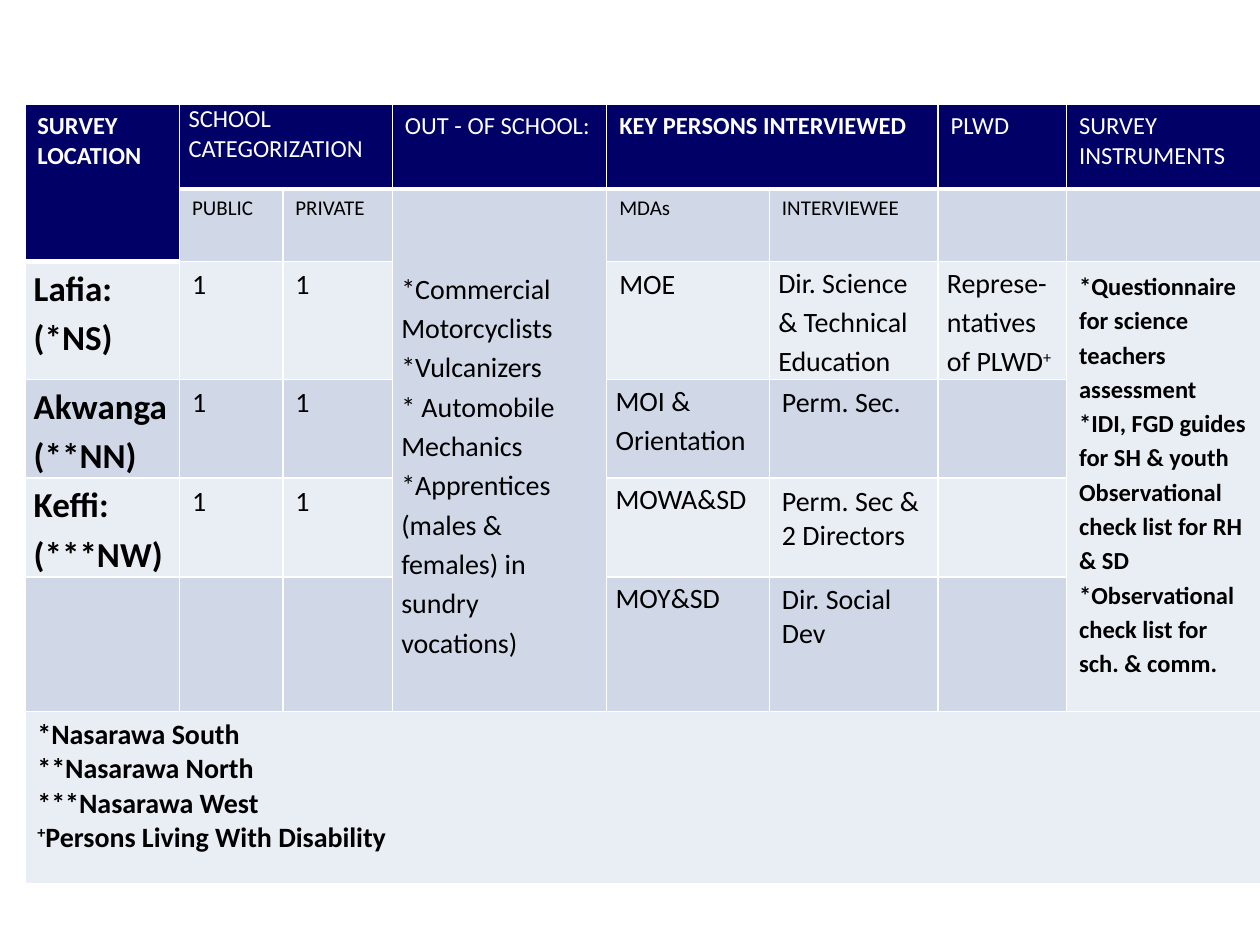
from dataclasses import dataclass

from lxml.etree import SubElement
from pptx import Presentation
from pptx.dml.color import RGBColor
from pptx.oxml.ns import qn
from pptx.util import Cm, Pt


@dataclass(frozen=True)
class Style:
    size: int
    bold: bool = False
    color: str = "000000"
    tight: bool = False
    spacing: float = 1.0
    top: float = 0.0


class Theme:
    font = "Calibri"
    header = "000066"
    bands = ("E9EDF4", "D0D8E8")
    border = "FFFFFF"
    styles = {
        "head": Style(14, color="FFFFFF"),
        "head bold": Style(14, bold=True, color="FFFFFF"),
        "head tight": Style(14, color="FFFFFF", tight=True),
        "subhead": Style(12),
        "place": Style(20, bold=True, tight=True, spacing=1.15),
        "plain": Style(16),
        "tight": Style(16, tight=True, spacing=1.15),
        "groups": Style(16, tight=True, spacing=1.15, top=1.58),
        "tools": Style(14, bold=True, spacing=1.15),
        "notes": Style(16, bold=True),
    }


COLUMN_WIDTHS = [3.12, 2.08, 2.21, 4.32, 3.28, 3.4, 2.59, 3.91]
ROW_HEIGHTS = [1.7, 1.46, 2.37, 1.98, 1.99, 2.72, 3.47]
SPANS = [(0, 0, 1, 0), (0, 1, 0, 2), (0, 4, 0, 5), (1, 3, 5, 3), (2, 7, 5, 7), (6, 0, 6, 7)]
SUPERSCRIPT = "+"

CONTENT = [
    (0, 0, "head bold", [["SURVEY LOCATION"]]),
    (0, 1, "head tight", [["SCHOOL CATEGORIZATION"]]),
    (0, 3, "head", [["OUT - OF SCHOOL:"]]),
    (0, 4, "head bold", [["KEY PERSONS INTERVIEWED"]]),
    (0, 6, "head", [["PLWD"]]),
    (0, 7, "head", [["SURVEY INSTRUMENTS"]]),
    (1, 1, "subhead", [["PUBLIC"]]),
    (1, 2, "subhead", [["PRIVATE"]]),
    (1, 3, "groups", [
        ["*Commercial Motorcyclists"],
        ["*Vulcanizers"],
        ["* Automobile Mechanics"],
        ["*Apprentices (males & females) in sundry vocations)"],
    ]),
    (1, 4, "subhead", [["MDAs"]]),
    (1, 5, "subhead", [["INTERVIEWEE"]]),
    (2, 0, "place", [["Lafia: (*NS)"]]),
    (2, 1, "plain", [["1"]]),
    (2, 2, "plain", [["1"]]),
    (2, 4, "plain", [["MOE"]]),
    (2, 5, "tight", [["Dir. Science & Technical Education"]]),
    (2, 6, "tight", [["Represe-ntatives of PLWD", SUPERSCRIPT]]),
    (2, 7, "tools", [
        ["*Questionnaire for science teachers assessment"],
        ["*IDI, FGD guides for SH & youth"],
        ["Observational check list for RH & SD"],
        ["*Observational check list for sch. & comm."],
    ]),
    (3, 0, "place", [["Akwanga (**NN)"]]),
    (3, 1, "plain", [["1"]]),
    (3, 2, "plain", [["1"]]),
    (3, 4, "tight", [["MOI & Orientation"]]),
    (3, 5, "plain", [["Perm. Sec."]]),
    (4, 0, "place", [["Keffi: (***NW)"]]),
    (4, 1, "plain", [["1"]]),
    (4, 2, "plain", [["1"]]),
    (4, 4, "tight", [["MOWA&SD"]]),
    (4, 5, "plain", [["Perm. Sec & 2 Directors"]]),
    (5, 4, "tight", [["MOY&SD"]]),
    (5, 5, "plain", [["Dir. Social Dev"]]),
    (6, 0, "notes", [
        ["*Nasarawa South"],
        ["**Nasarawa North"],
        ["***Nasarawa West"],
        [SUPERSCRIPT, "Persons Living With Disability"],
    ]),
]


def paint_cell(cell, row):
    properties = cell._tc.get_or_add_tcPr()
    for side in ("L", "R", "T", "B"):
        width = Pt(3) if row == 0 and side == "B" else Pt(1)
        line = SubElement(properties, qn(f"a:ln{side}"), w=str(width))
        solid = SubElement(line, qn("a:solidFill"))
        SubElement(solid, qn("a:srgbClr"), val=Theme.border)
    cell.fill.solid()
    color = Theme.header if row == 0 else Theme.bands[row % 2]
    cell.fill.fore_color.rgb = RGBColor.from_string(color)


def write_cell(cell, style, paragraphs):
    if style.tight:
        cell.margin_left = cell.margin_right = Cm(0.18)
        cell.margin_top = Cm(style.top)
        cell.margin_bottom = Cm(0)
    frame = cell.text_frame
    for index, texts in enumerate(paragraphs):
        para = frame.add_paragraph() if index else frame.paragraphs[0]
        para.line_spacing = style.spacing
        for text in texts:
            span = para.add_run()
            span.text = text
            span.font.name = Theme.font
            span.font.size = Pt(style.size)
            span.font.bold = style.bold
            span.font.color.rgb = RGBColor.from_string(style.color)
            if text == SUPERSCRIPT:
                span._r.get_or_add_rPr().set("baseline", "30000")


def add_survey_table(page):
    table = page.shapes.add_table(
        len(ROW_HEIGHTS), len(COLUMN_WIDTHS), Cm(0.5), Cm(2.11),
        Cm(sum(COLUMN_WIDTHS)), Cm(sum(ROW_HEIGHTS)),
    ).table
    table.first_row = table.horz_banding = False
    for column, width in zip(table.columns, COLUMN_WIDTHS):
        column.width = Cm(width)
    for index, (row, height) in enumerate(zip(table.rows, ROW_HEIGHTS)):
        row.height = Cm(height)
        for cell in row.cells:
            paint_cell(cell, index)
    for top, left, bottom, right in SPANS:
        table.cell(top, left).merge(table.cell(bottom, right))
    for row, column, style, paragraphs in CONTENT:
        write_cell(table.cell(row, column), Theme.styles[style], paragraphs)


def main():
    deck = Presentation()
    deck.slide_width, deck.slide_height = Cm(25.4), Cm(19.05)
    page = deck.slides.add_slide(deck.slide_layouts[6])
    add_survey_table(page)
    deck.save("out.pptx")


if __name__ == "__main__":
    main()
